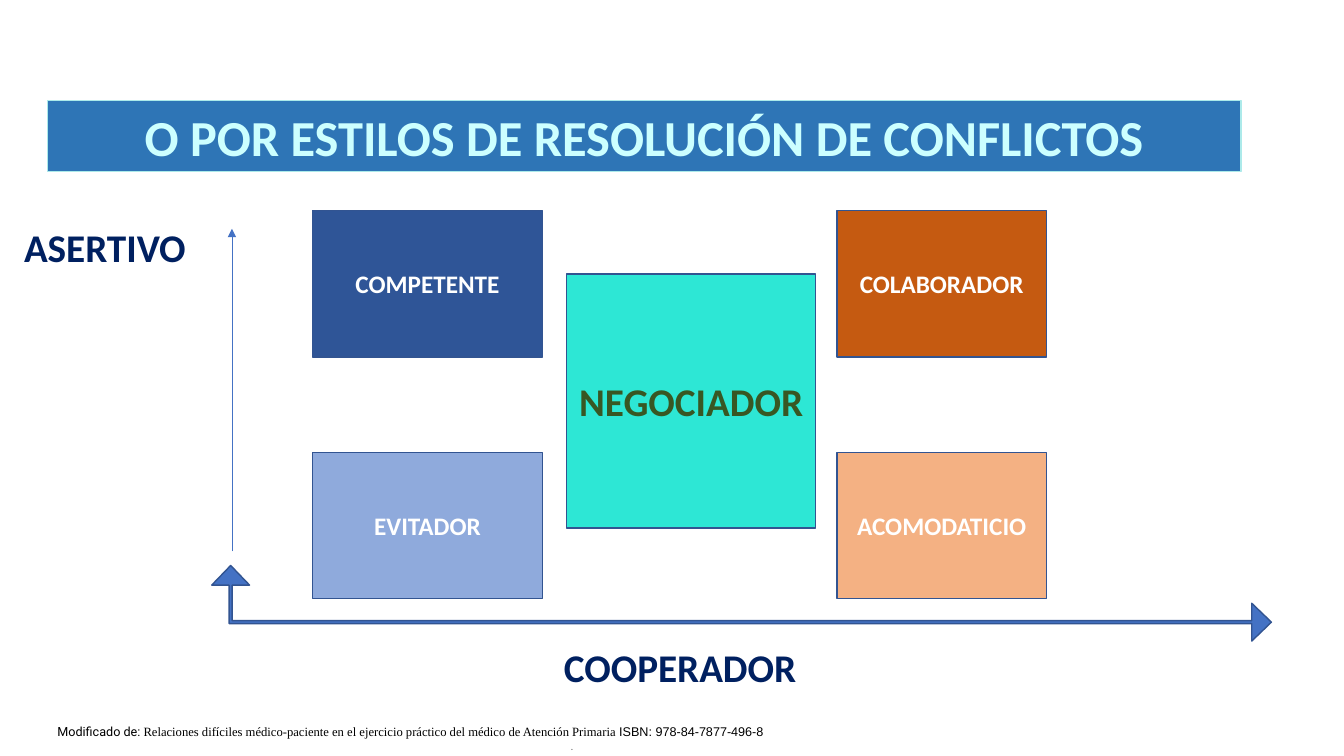
"""Build the slide on conflict resolution styles along two axes."""
from dataclasses import dataclass

from lxml.etree import SubElement
from pptx import Presentation
from pptx.dml.color import RGBColor
from pptx.enum.shapes import MSO_CONNECTOR, MSO_SHAPE
from pptx.enum.text import MSO_ANCHOR, MSO_AUTO_SIZE, PP_ALIGN
from pptx.oxml.ns import qn
from pptx.util import Inches, Pt


@dataclass(frozen=True)
class Theme:
    """Colours, fonts and type sizes of the slide."""
    font: str = "Calibri"
    banner: str = "2E75B6"
    banner_line: str = "ACEAEA"
    banner_text: str = "CCFFFF"
    accent: str = "4472C4"
    outline: str = "325491"
    axis_text: str = "002060"
    white: str = "FFFFFF"
    black: str = "000000"
    gray: str = "666666"
    navy: str = "2F5597"
    light_blue: str = "8FAADC"
    rust: str = "C55A11"
    peach: str = "F4B183"
    turquoise: str = "2DE7D5"
    green: str = "385723"
    title_size: int = 36
    label_size: int = 28
    style_size: int = 18
    source_size: int = 9
    dot_size: int = 8


theme = Theme()


def paint(shape, fill, line):
    """Give a shape a solid fill and a thin outline."""
    shape.fill.solid()
    shape.fill.fore_color.rgb = RGBColor.from_string(fill)
    shape.line.color.rgb = RGBColor.from_string(line)
    shape.line.width = Pt(1)


def add_span(para, text, size, color, font=theme.font, bold=False):
    """Add one formatted run to a paragraph."""
    span = para.add_run()
    span.text = text
    span.font.name = font
    span.font.size = Pt(size)
    span.font.bold = bold
    span.font.color.rgb = RGBColor.from_string(color)


deck = Presentation()
deck.slide_width, deck.slide_height = Inches(13.33), Inches(7.5)
page = deck.slides.add_slide(deck.slide_layouts[5])

title = page.shapes.title
title.left, title.top = Inches(0.47), Inches(1)
title.width, title.height = Inches(11.84), Inches(0.7)
paint(title, theme.banner, theme.banner_line)
title.text_frame.auto_size = MSO_AUTO_SIZE.NONE
title.text_frame.vertical_anchor = MSO_ANCHOR.MIDDLE
para = title.text_frame.paragraphs[0]
para.alignment = PP_ALIGN.CENTER
add_span(para, "O POR ESTILOS DE RESOLUCIÓN DE CONFLICTOS",
         theme.title_size, theme.banner_text, bold=True)

axes = page.shapes.add_shape(MSO_SHAPE.LEFT_UP_ARROW, Inches(6.98), Inches(0.73),
                             Inches(0.75), Inches(10.51))
axes.rotation = 90
axes.shadow.inherit = False
paint(axes, theme.accent, theme.outline)
for index, value in enumerate((0.04, 0.25, 0.26)):
    axes.adjustments[index] = value

arrow = page.shapes.add_connector(MSO_CONNECTOR.STRAIGHT, Inches(2.3), Inches(5.47),
                                  Inches(2.3), Inches(2.27))
arrow.line.color.rgb = RGBColor.from_string(theme.accent)
arrow.line.width = Pt(0.5)
SubElement(arrow.line._get_or_add_ln(), qn("a:tailEnd"), type="triangle")
SubElement(arrow._element.spPr, qn("a:effectLst"))

left, right, upper, lower = 3.1, 8.3, 2.09, 4.49
left_width, right_width, style_height = 2.28, 2.08, 1.45
boxes = [
    ("COOPERADOR", 4.04, 6.36, 5.41, 0.51,
     theme.white, theme.white, theme.axis_text, theme.label_size),
    ("ASERTIVO", 0.13, 2.17, 1.82, 0.56,
     theme.white, theme.white, theme.axis_text, theme.label_size),
    ("NEGOCIADOR", 5.62, 2.72, 2.47, 2.52,
     theme.turquoise, theme.outline, theme.green, theme.label_size),
]
for text, x, y, width, fill in (
    ("EVITADOR", left, lower, left_width, theme.light_blue),
    ("COMPETENTE", left, upper, left_width, theme.navy),
    ("COLABORADOR", right, upper, right_width, theme.rust),
    ("ACOMODATICIO", right, lower, right_width, theme.peach),
):
    boxes.append((text, x, y, width, style_height,
                  fill, theme.outline, theme.white, theme.style_size))

for text, x, y, width, height, fill, line, color, size in boxes:
    box = page.shapes.add_shape(MSO_SHAPE.RECTANGLE, Inches(x), Inches(y),
                                Inches(width), Inches(height))
    box.shadow.inherit = False
    paint(box, fill, line)
    box.text_frame.word_wrap = False
    box.text_frame.vertical_anchor = MSO_ANCHOR.MIDDLE
    para = box.text_frame.paragraphs[0]
    para.alignment = PP_ALIGN.CENTER
    add_span(para, text, size, color, bold=True)

source = page.shapes.add_textbox(Inches(0.47), Inches(7.08), Inches(10.41), Inches(0.32))
frame = source.text_frame
frame.word_wrap = True
frame.vertical_anchor = MSO_ANCHOR.TOP
frame.margin_top = Inches(0.1)
frame.margin_bottom = 0
para = frame.paragraphs[0]
for text, font in (
    ("Modificado de:", "Roboto"),
    (" Relaciones difíciles médico-paciente en el ejercicio práctico del médico "
     "de Atención Primaria", "Times New Roman"),
    (" ISBN: 978-84-7877-496-8", "Arial"),
):
    add_span(para, text, theme.source_size, theme.black, font)
para = frame.add_paragraph()
para.alignment = PP_ALIGN.CENTER
add_span(para, ".", theme.dot_size, theme.gray, "Roboto")

deck.save("out.pptx")
